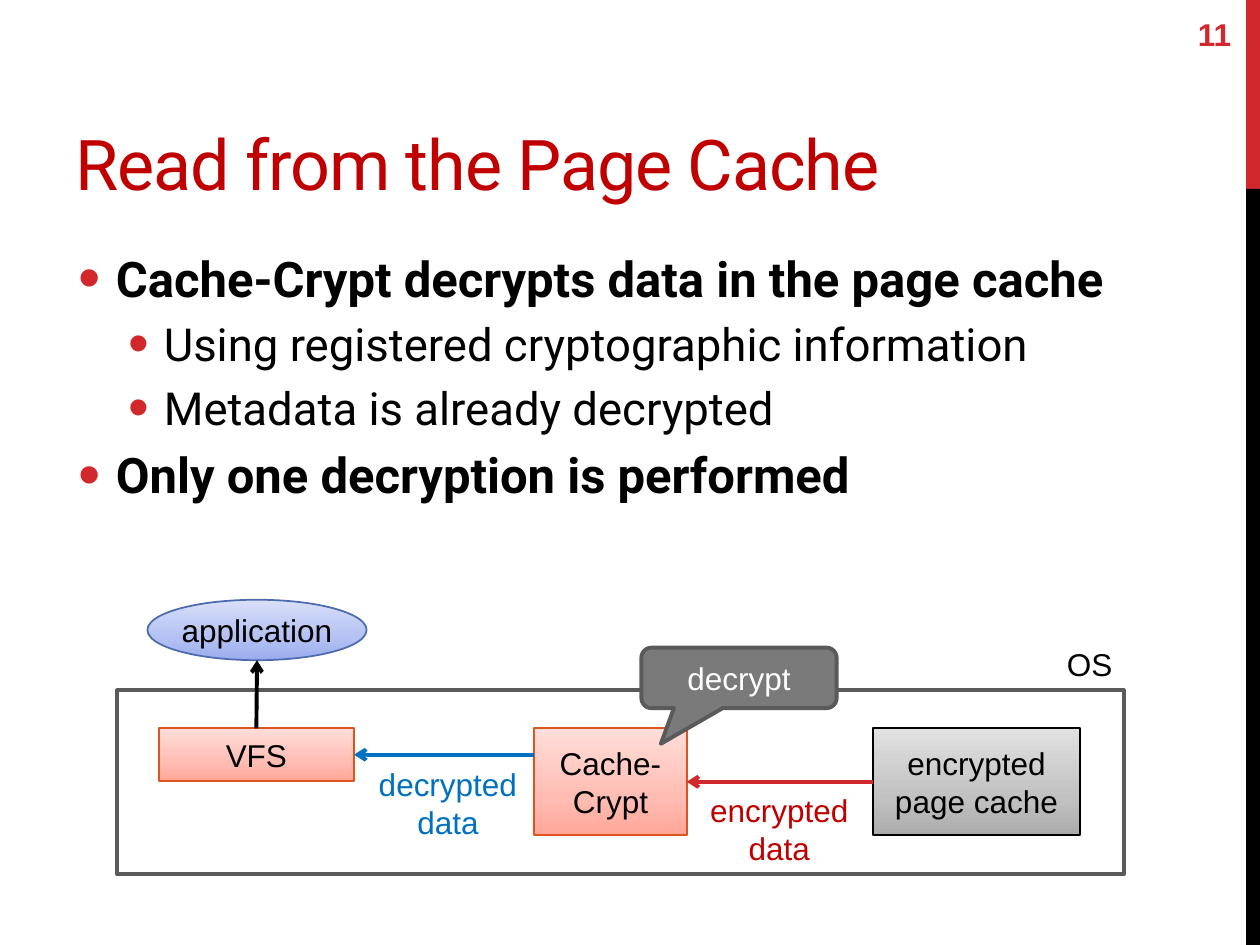
from lxml import etree
from pptx import Presentation
from pptx.dml.color import RGBColor
from pptx.enum import shapes, text
from pptx.oxml.ns import qn
from pptx.util import Inches, Pt

RED = RGBColor(0xD1, 0x28, 0x2E)
DARK_RED = RGBColor(0xC0, 0x00, 0x00)
BLUE = RGBColor(0x00, 0x70, 0xC0)
NAVY = RGBColor(0x4E, 0x6A, 0xAE)
ORANGE = RGBColor(0xDC, 0x55, 0x1F)
BLACK = RGBColor(0x00, 0x00, 0x00)
WHITE = RGBColor(0xFF, 0xFF, 0xFF)
GRAY = RGBColor(0x7A, 0x7A, 0x7A)
DARK_GRAY = RGBColor(0x5A, 0x5A, 0x5A)


def rgb_triple(*codes):
    """Return the colours for hexadecimal codes."""
    return [RGBColor.from_string(code) for code in codes]


BLUE_GRADIENT = rgb_triple("9AACED", "B2C0F3", "D8DFF9")
RED_GRADIENT = rgb_triple("FFA698", "FFBCB3", "FFDED9")
GRAY_GRADIENT = rgb_triple("ABABAB", "C1C1C1", "E1E1E1")
GRADIENT_POSITIONS = (0, 35, 100)

KIND = shapes.MSO_SHAPE
ALIGN = text.PP_ALIGN
ANCHOR = text.MSO_ANCHOR
BULLETS = [
    ("Cache-Crypt decrypts data in the page cache", 0),
    ("Using registered cryptographic information", 1),
    ("Metadata is already decrypted", 1),
    ("Only one decryption is performed", 0),
]


def add_element(parent, tag, **attributes):
    """Append a DrawingML element and return it."""
    return etree.SubElement(parent, qn(f"a:{tag}"), attributes)


def style_font(font, size, color, name="Arial", bold=False):
    """Set the look of a font."""
    font.size, font.name, font.bold = Pt(size), name, bold
    font.color.rgb = color


def write_text(shape, content, color, size=18, name="Arial", bold=False,
               align=ALIGN.CENTER, anchor=ANCHOR.MIDDLE, wrap=True):
    """Fill a shape with uniformly formatted text."""
    frame = shape.text_frame
    frame.text = content
    frame.word_wrap = wrap
    frame.vertical_anchor = anchor
    for paragraph in frame.paragraphs:
        paragraph.alignment = align
        for run in paragraph.runs:
            style_font(run.font, size, color, name, bold)


def add_text(slide, box, content, color, **options):
    """Add a text box and return it."""
    shape = slide.shapes.add_textbox(*map(Inches, box))
    write_text(shape, content, color, **options)
    return shape


def fill_gradient(shape, colors):
    """Fill a shape with a gradient that rises from its bottom."""
    shape.fill.gradient()
    shape.fill.gradient_angle = 90
    stops = shape._element.spPr.find(".//" + qn("a:gsLst"))
    for stop in list(stops):
        stops.remove(stop)
    for position, color in zip(GRADIENT_POSITIONS, colors):
        stop = add_element(stops, "gs", pos=str(position * 1000))
        add_element(stop, "srgbClr", val=str(color))


def add_box(slide, kind, box, fill, line=None, width=1):
    """Add a preset shape with a plain or gradient fill."""
    shape = slide.shapes.add_shape(kind, *map(Inches, box))
    shape.shadow.inherit = False
    if isinstance(fill, list):
        fill_gradient(shape, fill)
    else:
        shape.fill.solid()
        shape.fill.fore_color.rgb = fill
    if line is None:
        shape.line.fill.background()
    else:
        shape.line.color.rgb = line
        shape.line.width = Pt(width)
    return shape


def add_node(slide, kind, box, fill, line, content, wrap=True):
    """Add a labelled diagram node."""
    shape = add_box(slide, kind, box, fill, line)
    write_text(shape, content, BLACK, wrap=wrap)
    return shape


def add_arrow(slide, start, end, color):
    """Add a straight arrow that points at its end."""
    arrow = slide.shapes.add_connector(
        shapes.MSO_CONNECTOR.STRAIGHT, *map(Inches, start + end))
    arrow.line.color.rgb = color
    arrow.line.width = Pt(2.25)
    add_element(arrow.line._get_or_add_ln(), "tailEnd", type="arrow")
    add_element(arrow._element.spPr, "effectLst")
    return arrow


def add_bullets(slide, box):
    """Add the two-level bullet list."""
    frame = slide.shapes.add_textbox(*map(Inches, box)).text_frame
    frame.word_wrap = True
    frame.margin_left = frame.margin_right = Inches(0.12)
    for index, (content, level) in enumerate(BULLETS):
        paragraph = frame.add_paragraph() if index else frame.paragraphs[0]
        paragraph.text = content
        paragraph.level = level
        if index:
            paragraph.space_before = Pt(5.2 if level else 6)
        properties = paragraph._p.get_or_add_pPr()
        properties.set("marL", str(Inches(0.68 if level else 0.3)))
        properties.set("indent", str(-Inches(0.28 if level else 0.3)))
        bullet_color = add_element(properties, "buClr")
        add_element(bullet_color, "srgbClr", val=str(RED))
        add_element(properties, "buSzPct", val="130000")
        add_element(properties, "buFont", typeface="Arial")
        add_element(properties, "buChar", char="•")
        style_font(paragraph.runs[0].font, 26 if level else 28, BLACK,
                   "Roboto", level == 0)


def add_diagram(slide):
    """Draw the path of data from the page cache to the application."""
    add_node(slide, KIND.OVAL, (1.17, 4.76, 1.74, 0.48), BLUE_GRADIENT, NAVY,
             "application", wrap=False)
    add_box(slide, KIND.RECTANGLE, (0.93, 5.48, 7.99, 1.46), WHITE, DARK_GRAY, 2.25)
    vfs = add_node(slide, KIND.RECTANGLE, (1.26, 5.78, 1.55, 0.42),
                   RED_GRADIENT, ORANGE, "VFS")
    crypt = add_node(slide, KIND.RECTANGLE, (4.24, 5.78, 1.21, 0.85),
                     RED_GRADIENT, ORANGE, "Cache-\nCrypt")
    cache = add_node(slide, KIND.RECTANGLE, (6.93, 5.78, 1.64, 0.85),
                     GRAY_GRADIENT, BLACK, "encrypted\npage cache")

    add_arrow(slide, (4.24, 5.99), (2.81, 5.99), BLUE).end_connect(vfs, 3)
    label = {"anchor": ANCHOR.TOP, "wrap": False}
    add_text(slide, (2.9, 6.02, 1.31, 0.71), "decrypted\ndata", BLUE, **label)
    add_text(slide, (8.37, 5.07, 0.57, 0.4), "OS", BLACK, align=ALIGN.LEFT, **label)

    callout = add_box(slide, KIND.ROUNDED_RECTANGULAR_CALLOUT,
                      (5.09, 5.14, 1.55, 0.48), GRAY, DARK_GRAY, 2.25)
    callout.adjustments[0] = -0.4
    callout.adjustments[1] = 1.09
    write_text(callout, "decrypt", WHITE)

    encrypted = add_arrow(slide, (6.93, 6.21), (5.45, 6.21), RED)
    encrypted.begin_connect(cache, 1)
    encrypted.end_connect(crypt, 3)
    add_text(slide, (5.53, 6.23, 1.31, 0.71), "encrypted\ndata", DARK_RED, **label)
    add_arrow(slide, (2.04, 5.78), (2.04, 5.24), BLACK).begin_connect(vfs, 0)


def main():
    """Build and save the slide."""
    presentation = Presentation()
    presentation.slide_width, presentation.slide_height = Inches(10), Inches(7.5)
    slide = presentation.slides.add_slide(presentation.slide_layouts[6])
    add_box(slide, KIND.RECTANGLE, (9.89, 0, 0.12, 1.5), RED)
    add_box(slide, KIND.RECTANGLE, (9.89, 1.5, 0.12, 6), BLACK)
    title = add_text(slide, (0.5, 0.17, 9.02, 1.5), "Read from the Page Cache",
                     DARK_RED, size=40, name="Roboto", align=ALIGN.LEFT,
                     anchor=ANCHOR.BOTTOM)
    title.text_frame.paragraphs[0].runs[0].font._element.set("spc", "-60")
    add_bullets(slide, (0.5, 1.92, 9.02, 5.18))
    add_text(slide, (9.12, 0.07, 0.75, 0.4), "11", RED, bold=True, align=ALIGN.RIGHT)
    add_diagram(slide)
    presentation.save("out.pptx")


if __name__ == "__main__":
    main()
